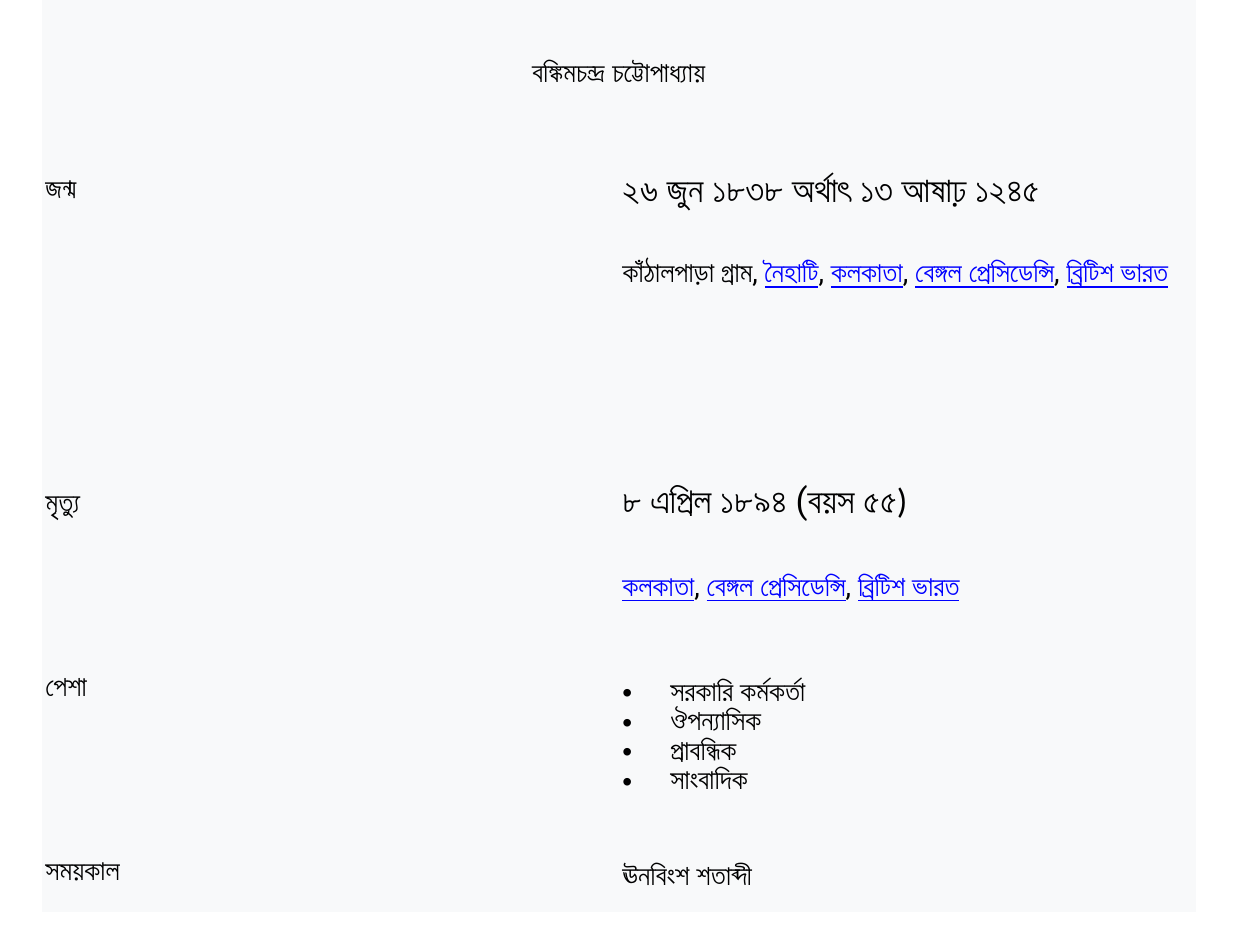
from lxml import etree
from pptx import Presentation
from pptx.dml.color import RGBColor
from pptx.enum.text import PP_ALIGN
from pptx.oxml.ns import qn
from pptx.util import Inches, Pt

CENTER, LEFT = PP_ALIGN.CENTER, PP_ALIGN.LEFT
BLACK = RGBColor(0x00, 0x00, 0x00)
LINK = RGBColor(0x00, 0x00, 0xFF)
PALE = RGBColor(0xF8, 0xF9, 0xFA)
NO_GRID = "{2D5ABB26-0587-4C30-8999-92F81FD0307C}"


def add_text(p, text, size=16, font="Calibri", color=BLACK, bold=False, underline=False):
    r = p.add_run()
    r.text = text
    f = r.font
    f.size, f.name, f.bold, f.underline = Pt(size), font, bold, underline
    f.color.rgb = color


def add_para(tf, line=16.8, before=6, after=6, align=LEFT, first=False):
    p = tf.paragraphs[0] if first else tf.add_paragraph()
    p.line_spacing, p.space_before, p.space_after = Pt(line), Pt(before), Pt(after)
    p.alignment = align
    return p


prs = Presentation()
prs.slide_width, prs.slide_height = Inches(10), Inches(7.5)
s = prs.slides.add_slide(prs.slide_layouts[6])

heights = [0.82, 0.58, 2.49, 1.46, 1.46, 0.43]
table = s.shapes.add_table(6, 2, Inches(0.33), Inches(0), Inches(9.17), Inches(7.25)).table
table._tbl.tblPr.find(qn("a:tableStyleId")).text = NO_GRID
for col in table.columns:
    col.width = Inches(4.58)
for row, height in zip(table.rows, heights):
    row.height = Inches(height)
for cell in table.iter_cells():
    cell.fill.solid()
    cell.fill.fore_color.rgb = PALE
    cell.margin_left = cell.margin_right = Inches(0.03)
    cell.margin_top = cell.margin_bottom = Inches(0.03)
for i in range(2):
    table.cell(i, 0).merge(table.cell(i, 1))

title = table.cell(0, 0)
title.margin_top = Inches(0.45)
p = add_para(title.text_frame, line=18, align=CENTER, first=True)
add_text(p, "বঙ্কিমচন্দ্র চট্টোপাধ্যায়", bold=True)

for i, label in enumerate(["জন্ম", "মৃত্যু", "পেশা", "সময়কাল"], start=2):
    cell = table.cell(i, 0)
    cell.margin_top, cell.margin_right = Inches(0.04), Inches(0.1)
    add_text(add_para(cell.text_frame, line=13.2, first=True), label, bold=True)

events = [
    ([("২৬ জুন ১৮৩৮ অর্থাৎ ১৩ আষাঢ় ১২৪৫", "Calibri")], "কাঁঠালপাড়া গ্রাম, ",
     ["নৈহাটি", "কলকাতা", "বেঙ্গল প্রেসিডেন্সি", "ব্রিটিশ ভারত"]),
    ([("৮ এপ্রিল ১৮৯৪ ", "Calibri"), ("(বয়স ", "Roboto"), ("৫৫)", "Calibri")], "",
     ["কলকাতা", "বেঙ্গল প্রেসিডেন্সি", "ব্রিটিশ ভারত"]),
]
for i, (date, village, places) in enumerate(events, start=2):
    tf = table.cell(i, 1).text_frame
    p = add_para(tf, first=True)
    for text, font in date:
        add_text(p, text, size=20, font=font)
    p = add_para(tf, before=22.8)
    if village:
        add_text(p, village, font="Roboto")
    for n, place in enumerate(places):
        if n:
            add_text(p, ", ", font="Roboto")
        add_text(p, place, font="Roboto", color=LINK, underline=True)

tf = table.cell(4, 1).text_frame
for n, job in enumerate(["সরকারি কর্মকর্তা", "ঔপন্যাসিক", "প্রাবন্ধিক", "সাংবাদিক"]):
    p = add_para(tf, before=0, after=0, first=n == 0)
    pPr = p._p.get_or_add_pPr()
    pPr.set("marL", str(Inches(0.38)))
    pPr.set("indent", str(-Inches(0.38)))
    etree.SubElement(pPr, qn("a:buFont"), typeface="Arial")
    etree.SubElement(pPr, qn("a:buChar"), char="•")
    add_text(p, job, font="Roboto")

p = add_para(table.cell(5, 1).text_frame, before=0, after=0, first=True)
add_text(p, "ঊনবিংশ শতাব্দী", font="Roboto")

prs.save("out.pptx")
